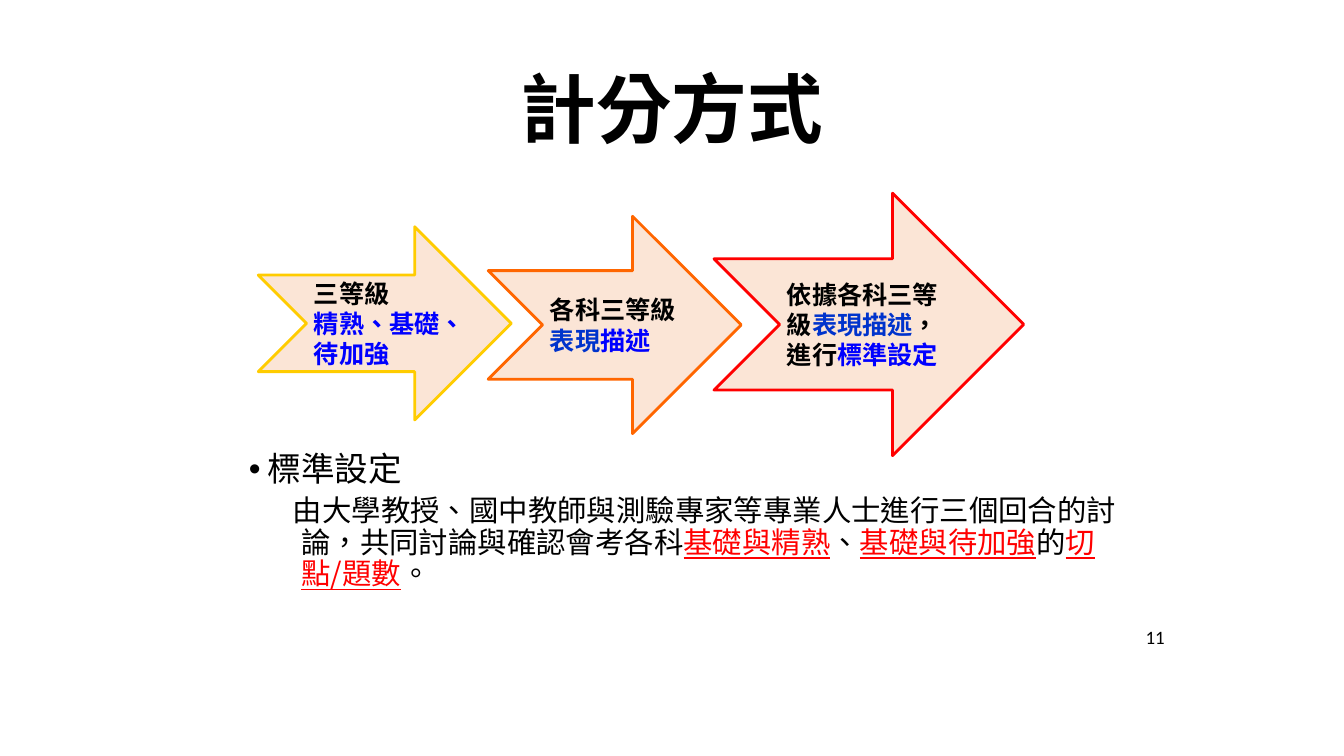
from dataclasses import dataclass

from lxml.etree import SubElement
from pptx import Presentation
from pptx.dml.color import RGBColor
from pptx.enum.lang import MSO_LANGUAGE_ID as Language
from pptx.enum.shapes import MSO_SHAPE as Shape
from pptx.enum.text import MSO_ANCHOR as Anchor, MSO_AUTO_SIZE as AutoSize, PP_ALIGN as Align
from pptx.oxml.ns import qn
from pptx.util import Pt

PX = 9525


@dataclass(frozen=True)
class Theme:
    """Colours, fonts and type sizes of the slide."""
    black: str = "000000"
    red: str = "FF0000"
    blue: str = "0000FF"
    deep_blue: str = "0033CC"
    yellow: str = "FFCC00"
    orange: str = "FF6600"
    peach: str = "FBE5D6"
    font: str = "Noto Sans CJK SC"
    number_font: str = "Calibri"
    title_size: float = 54
    heading_size: float = 24
    detail_size: float = 21
    arrow_size: float = 18
    number_size: float = 13.5


THEME = Theme()

ARROWS = [
    ((246, 216, 241, 184), THEME.yellow, [
        [("三等級", THEME.black)],
        [("精熟、基礎、待加強", THEME.blue)]]),
    ((465, 206, 241, 207), THEME.orange, [
        [("各科三等級", THEME.black)],
        [("表現", THEME.deep_blue), ("描述", THEME.blue)]]),
    ((680, 184, 295, 250), THEME.red, [
        [("依據各科三等級", THEME.black), ("表現描述", THEME.deep_blue),
         ("，進行", THEME.black), ("標準設定", THEME.blue)]]),
]

HEADING = [("標準設定", THEME.black)]
DETAIL = [
    ("由大學教授、國中教師與測驗專家等專業人士進行三個回合的討論，共同討論與確認會考各科", THEME.black),
    ("基礎與精熟", THEME.red), ("、", THEME.black),
    ("基礎與待加強", THEME.red), ("的", THEME.black),
    ("切點/題數", THEME.red), ("。", THEME.black),
]


def place(shape, box):
    """Move a shape to a box given in px."""
    shape.left, shape.top, shape.width, shape.height = (length * PX for length in box)


def set_frame(frame, anchor):
    """Give a text frame its anchor, wrapping and narrow insets."""
    frame.word_wrap = True
    frame.auto_size = AutoSize.NONE
    frame.vertical_anchor = anchor
    frame.margin_left = frame.margin_right = 7 * PX
    frame.margin_top = frame.margin_bottom = 4 * PX


def write(para, spans, size, bold=False, name=THEME.font):
    """Fill a paragraph with coloured spans."""
    for text, color in spans:
        span = para.add_run()
        span.text = text
        font = span.font
        font.name, font.size, font.bold = name, Pt(size), bold
        font.language_id = Language.TRADITIONAL_CHINESE
        font.color.rgb = RGBColor.from_string(color)
        SubElement(font._element, qn("a:ea"), typeface=name)


def set_bullet(para, left, indent, char=None):
    """Set the hanging indent in px and an optional bullet."""
    properties = para._p.get_or_add_pPr()
    properties.set("marL", str(left * PX))
    properties.set("indent", str(indent * PX))
    if char:
        SubElement(properties, qn("a:buFont"), typeface="Arial")
        SubElement(properties, qn("a:buChar"), char=char)
    else:
        SubElement(properties, qn("a:buNone"))


def add_title(page, box):
    """Place the slide title."""
    title = page.shapes.title
    place(title, box)
    frame = title.text_frame
    frame.auto_size = AutoSize.NONE
    frame.vertical_anchor = Anchor.MIDDLE
    para = frame.paragraphs[0]
    para.alignment, para.line_spacing = Align.CENTER, 0.9
    write(para, [("計分方式", THEME.black)], THEME.title_size, bold=True)


def add_arrow(page, box, line_color, lines):
    """Draw one notched arrow with its text."""
    arrow = page.shapes.add_shape(Shape.NOTCHED_RIGHT_ARROW, *(length * PX for length in box))
    arrow.shadow.inherit = False
    arrow.fill.solid()
    arrow.fill.fore_color.rgb = RGBColor.from_string(THEME.peach)
    arrow.line.color.rgb = RGBColor.from_string(line_color)
    arrow.line.width = Pt(2)
    frame = arrow.text_frame
    set_frame(frame, Anchor.MIDDLE)
    for index, spans in enumerate(lines):
        para = frame.add_paragraph() if index else frame.paragraphs[0]
        para.alignment = Align.LEFT
        write(para, spans, THEME.arrow_size, bold=True)


def add_body(page, box):
    """Place the bulleted heading and its underlined explanation."""
    body = page.placeholders[1]
    place(body, box)
    frame = body.text_frame
    set_frame(frame, Anchor.TOP)
    heading, detail = frame.paragraphs[0], frame.add_paragraph()
    set_bullet(heading, 18, -18, "•")
    set_bullet(detail, 50, -8)
    heading.line_spacing = detail.line_spacing = 0.9
    heading.space_before, detail.space_before = Pt(0), Pt(5.2)
    write(heading, HEADING, THEME.heading_size)
    write(detail, DETAIL, THEME.detail_size)
    for span, (_, color) in zip(detail.runs, DETAIL):
        span.font.underline = color == THEME.red


def add_number(page, box):
    """Place the page number."""
    number = page.shapes.add_textbox(*(length * PX for length in box))
    set_frame(number.text_frame, Anchor.MIDDLE)
    write(number.text_frame.paragraphs[0], [("11", THEME.black)],
          THEME.number_size, name=THEME.number_font)


def main():
    """Build and save the deck."""
    deck = Presentation()
    deck.slide_width, deck.slide_height = 1280 * PX, 720 * PX
    page = deck.slides.add_slide(deck.slide_layouts[1])
    add_title(page, (88, 38, 1104, 139))
    for box, line_color, lines in ARROWS:
        add_arrow(page, box, line_color, lines)
    add_body(page, (230, 427, 842, 154))
    add_number(page, (1084, 592, 41, 29))
    deck.save("out.pptx")


if __name__ == "__main__":
    main()
